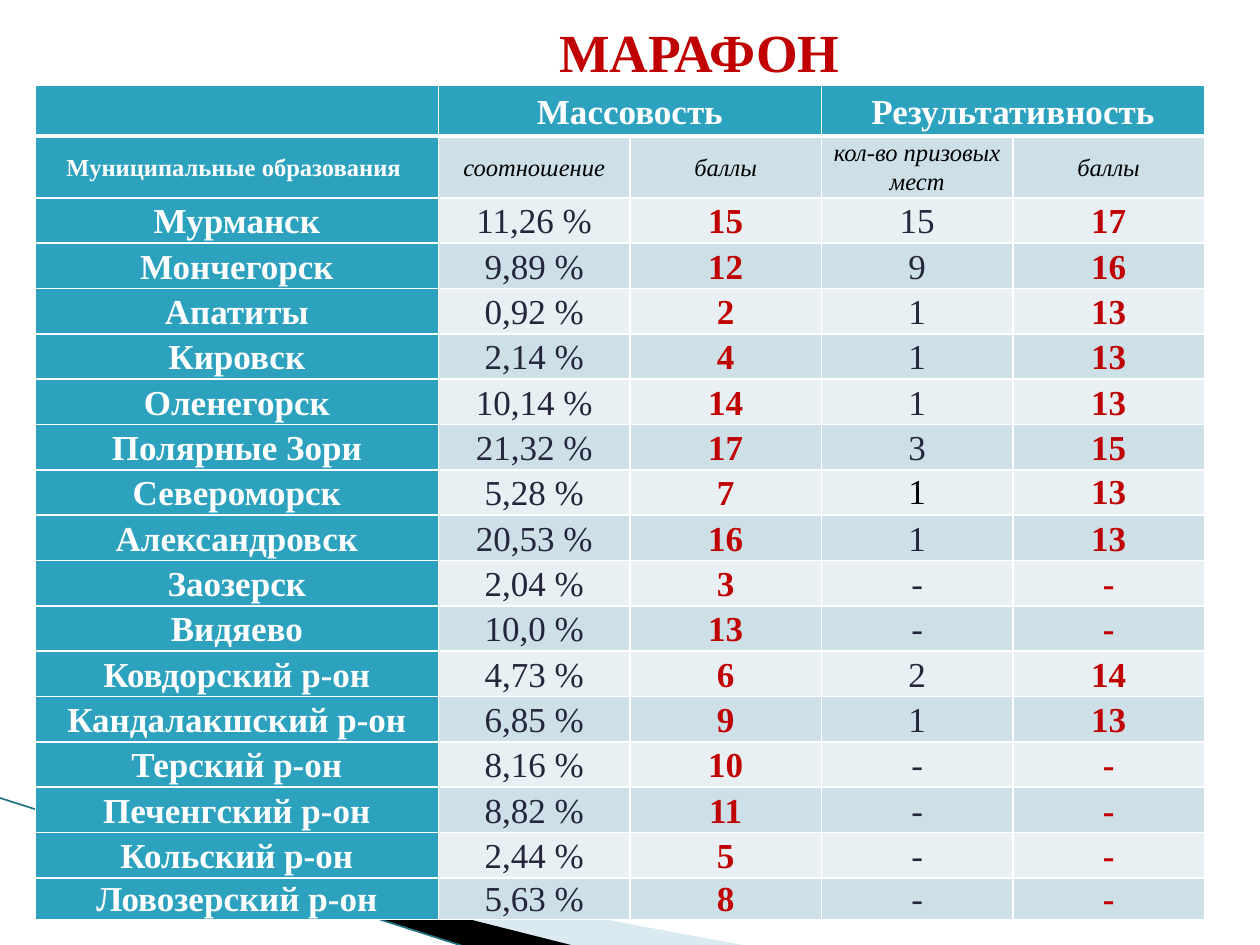
import pptx
import pptx.dml.color
import pptx.enum.shapes
import pptx.enum.text
import pptx.oxml
import pptx.oxml.ns
import pptx.util

Inches = pptx.util.Inches
Pt = pptx.util.Pt
RGBColor = pptx.dml.color.RGBColor
CENTER = pptx.enum.text.PP_ALIGN.CENTER
MIDDLE = pptx.enum.text.MSO_ANCHOR.MIDDLE

FONT = "Times New Roman"
WHITE = RGBColor(0xFF, 0xFF, 0xFF)
BLACK = RGBColor(0x00, 0x00, 0x00)
TEAL = RGBColor(0x2D, 0xA2, 0xBF)
DARK_TEAL = RGBColor(0x1F, 0x73, 0x87)
PALE_BLUE = RGBColor(0xA0, 0xCB, 0xDC)
BAND_DARK = RGBColor(0xCD, 0xE0, 0xE8)
BAND_LIGHT = RGBColor(0xE8, 0xF0, 0xF4)
RED = RGBColor(0xC0, 0x00, 0x00)
NAVY = RGBColor(0x24, 0x26, 0x3C)

COL_WIDTHS = [3.2, 1.52, 1.52, 1.52, 1.52]
GROUPS = ["", "Массовость", "", "Результативность", ""]
HEADINGS = ["Муниципальные образования ", "соотношение", "баллы", "кол-во призовых мест", "баллы"]
RESULTS = [
    ("Мурманск", "11,26 %", "15", "15", "17"),
    ("Мончегорск", "9,89 %", "12", "9", "16"),
    ("Апатиты", "0,92 %", "2", "1", "13"),
    ("Кировск", "2,14 %", "4", "1", "13"),
    ("Оленегорск", "10,14 %", "14", "1", "13"),
    ("Полярные Зори", "21,32 %", "17", "3", "15"),
    ("Североморск", "5,28 %", "7", "1", "13"),
    ("Александровск", "20,53 %", "16", "1", "13"),
    ("Заозерск", "2,04 %", "3", "-", "-"),
    ("Видяево", "10,0 %", "13", "-", "-"),
    ("Ковдорский р-он", "4,73 %", "6", "2", "14"),
    ("Кандалакшский р-он", "6,85 %", "9", "1", "13"),
    ("Терский р-он", "8,16 %", "10", "-", "-"),
    ("Печенгский р-он", "8,82 %", "11", "-", "-"),
    ("Кольский р-он", "2,44 %", "5", "-", "-"),
    ("Ловозерский р-он", "5,63 %", "8", "-", "-"),
]
SINGLE_SPACED = "Североморск"


def add_run(p, text, size, color, bold=True, italic=False):
    """Add one formatted run to a paragraph."""
    r = p.add_run()
    r.text = text
    r.font.name = FONT
    r.font.size = Pt(size)
    r.font.color.rgb = color
    r.font.bold = bold
    r.font.italic = italic


def add_wedge(s, points, color, alpha=None):
    """Add a filled polygon without outline, given its corners in inches."""
    corners = [(Inches(x), Inches(y)) for x, y in points]
    builder = s.shapes.build_freeform(*corners[0])
    builder.add_line_segments(corners[1:], close=True)
    sp = builder.convert_to_shape()
    sp.shadow.inherit = False
    sp.fill.solid()
    sp.fill.fore_color.rgb = color
    sp.line.fill.background()
    if alpha is not None:
        clr = sp.fill._xPr.find(".//" + pptx.oxml.ns.qn("a:srgbClr"))
        pptx.oxml.ns.qn("a:alpha")
        clr.append(make_element(f'<a:alpha %s val="{alpha * 1000}"/>'))


def make_element(xml):
    """Parse a drawing element whose namespace goes in the %s slot."""
    return pptx.oxml.parse_xml(xml % pptx.oxml.ns.nsdecls("a"))


def add_line(s, x1, y1, x2, y2, color, width):
    """Add a straight line without shadow."""
    kind = pptx.enum.shapes.MSO_CONNECTOR.STRAIGHT
    line = s.shapes.add_connector(kind, Inches(x1), Inches(y1), Inches(x2), Inches(y2))
    line.line.color.rgb = color
    line.line.width = Pt(width)
    line._element.spPr.append(make_element("<a:effectLst %s/>"))


def add_title(s, text):
    """Add the heading, moved right of centre by its left inset."""
    sp = s.shapes.add_textbox(Inches(0.49), Inches(0.13), Inches(9), Inches(0.55))
    tf = sp.text_frame
    tf.word_wrap = True
    tf.vertical_anchor = MIDDLE
    tf.margin_left = Inches(1.22)
    tf.margin_top = tf.margin_bottom = Inches(0)
    tf.paragraphs[0].alignment = CENTER
    add_run(tf.paragraphs[0], text, 30.6, RED)


def set_borders(cell, top, bottom):
    """Draw white cell borders, with given top and bottom widths in points."""
    tc_pr = cell._tc.get_or_add_tcPr()
    for side, width in (("L", 1), ("R", 1), ("T", top), ("B", bottom)):
        tc_pr.append(make_element(
            f'<a:ln{side} %s w="{Pt(width)}"><a:solidFill>'
            f'<a:srgbClr val="{WHITE}"/></a:solidFill></a:ln{side}>'))


def fill_cell(cell, text, fill, spacing=1.07, top=1, bottom=1, **style):
    """Set the borders, fill and centred text of one table cell."""
    set_borders(cell, top, bottom)
    cell.fill.solid()
    cell.fill.fore_color.rgb = fill
    cell.vertical_anchor = MIDDLE
    cell.margin_left = cell.margin_right = Inches(0.07)
    cell.margin_top = cell.margin_bottom = Inches(0)
    p = cell.text_frame.paragraphs[0]
    p.alignment = CENTER
    p.line_spacing = spacing
    if text:
        add_run(p, text, **style)


def add_results_table(s):
    """Add the score table with its two header rows."""
    heights = [0.4, 0.49] + [0.36] * (len(RESULTS) - 1) + [0.28]
    frame = s.shapes.add_table(len(heights), len(COL_WIDTHS), Inches(0.28), Inches(0.68),
                               Inches(sum(COL_WIDTHS)), Inches(sum(heights)))
    table = frame.table
    for column, width in zip(table.columns, COL_WIDTHS):
        column.width = Inches(width)
    for row, height in zip(table.rows, heights):
        row.height = Inches(height)

    for c, (group, heading) in enumerate(zip(GROUPS, HEADINGS)):
        fill_cell(table.cell(0, c), group, TEAL, bottom=3, size=20, color=WHITE)
        first = c == 0
        fill_cell(table.cell(1, c), heading, TEAL if first else BAND_DARK, top=3, size=14,
                  color=WHITE if first else BLACK, bold=first, italic=not first)
    for c in (1, 3):
        table.cell(0, c).merge(table.cell(0, c + 1))

    colors = [WHITE, NAVY, RED, NAVY, RED]
    for i, values in enumerate(RESULTS):
        band = BAND_DARK if i % 2 else BAND_LIGHT
        for c, value in enumerate(values):
            single = values[0] == SINGLE_SPACED and c >= 3
            color = BLACK if single and c == 3 else colors[c]
            fill_cell(table.cell(i + 2, c), value, band if c else TEAL,
                      spacing=1.0 if single else 1.07, size=20, color=color,
                      bold=colors[c] != NAVY)


def main():
    """Build the slide and save it."""
    prs = pptx.Presentation()
    prs.slide_width = Inches(10)
    prs.slide_height = Inches(7.5)
    s = prs.slides.add_slide(prs.slide_layouts[6])
    add_wedge(s, [(0.55, 6.51), (5.95, 7.51), (4.56, 7.51), (0.55, 6.5)], PALE_BLUE, alpha=40)
    add_wedge(s, [(0.53, 6.49), (4.57, 7.51), (3.72, 7.52), (0.54, 6.5)], BLACK)
    add_line(s, -0.01, 6.33, 3.71, 7.52, DARK_TEAL, 0.95)
    add_results_table(s)
    add_title(s, "МАРАФОН")
    prs.save("out.pptx")


if __name__ == "__main__":
    main()
